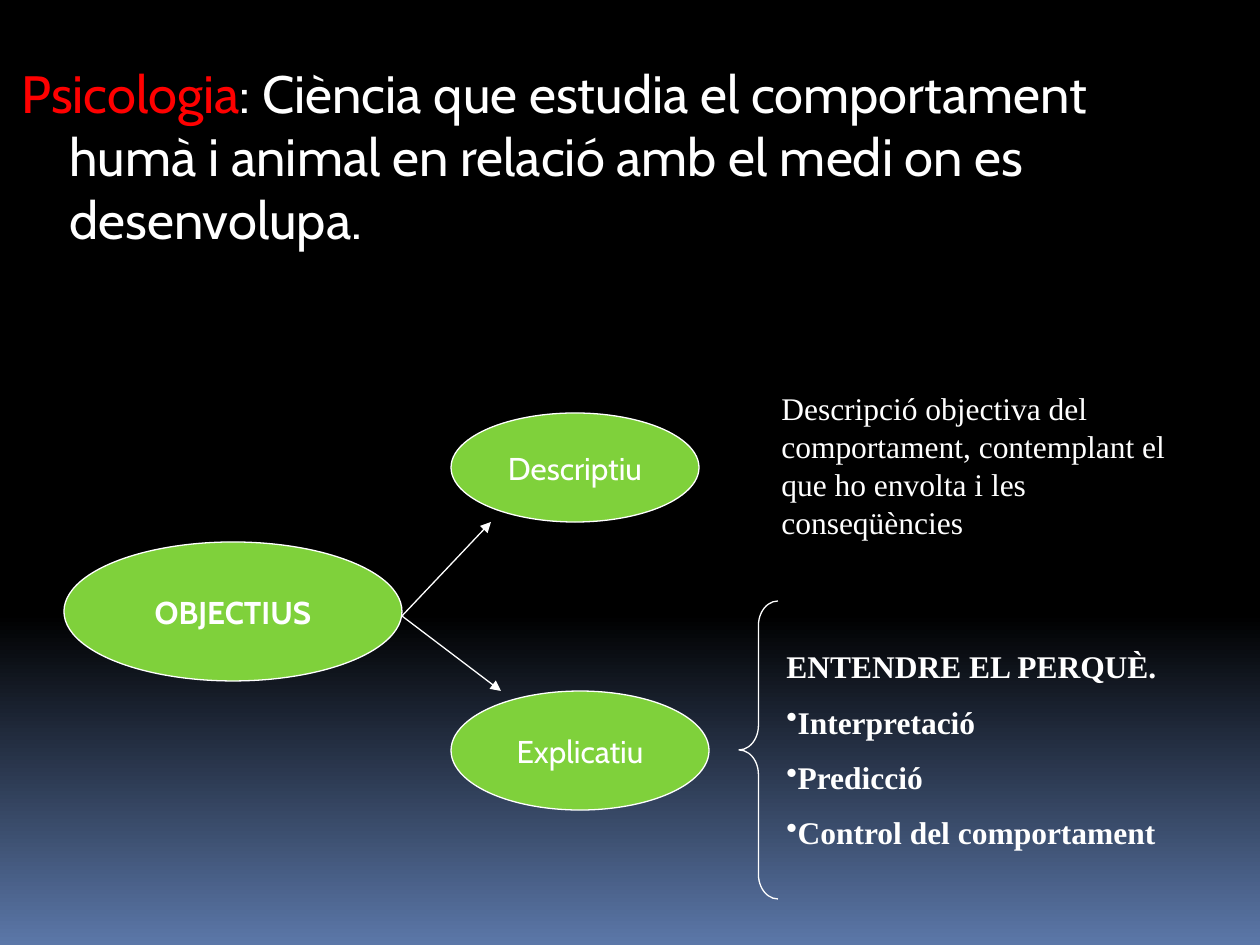
from copy import deepcopy
from dataclasses import dataclass

from lxml.etree import SubElement
from pptx import Presentation
from pptx.dml.color import RGBColor
from pptx.enum.shapes import MSO_CONNECTOR as Connector, MSO_SHAPE as Shape
from pptx.enum.text import MSO_ANCHOR as Anchor, MSO_AUTO_SIZE as AutoSize, PP_ALIGN as Align
from pptx.oxml.ns import qn
from pptx.util import Emu, Pt


@dataclass(frozen=True)
class Theme:
    black: RGBColor = RGBColor(0, 0, 0)
    blue: RGBColor = RGBColor(0x5B, 0x77, 0xA8)
    green: RGBColor = RGBColor(0x7F, 0xD1, 0x3B)
    red: RGBColor = RGBColor(0xFF, 0, 0)
    white: RGBColor = RGBColor(0xFF, 0xFF, 0xFF)
    sans: str = "Cabin"
    serif: str = "Times New Roman"
    definition_size: Pt = Pt(30)
    text_size: Pt = Pt(18)
    line_width: Pt = Pt(0.75)


THEME = Theme()
EMU_PER_PX = 914400 / 126


def px(length):
    return Emu(round(length * EMU_PER_PX))


def box(*lengths):
    return [px(length) for length in lengths]


def set_font(paragraph, name, size, bold=False):
    font = paragraph.font
    font.name, font.size, font.bold = name, size, bold
    font.color.rgb = THEME.white


def set_line(shape):
    shape.line.color.rgb = THEME.white
    shape.line.width = THEME.line_width


def set_background(slide):
    fill = slide.background.fill
    fill.gradient()
    fill.gradient_angle = 270
    for stop, color, position in zip(fill.gradient_stops, (THEME.black, THEME.blue), (0.65, 1)):
        stop.color.rgb = color
        stop.position = position
    stops = slide.element.find(".//" + qn("a:gsLst"))
    top_stop = deepcopy(stops[0])
    top_stop.set("pos", "0")
    stops.insert(0, top_stop)


def write_definition(slide, term, meaning):
    body = slide.placeholders[1]
    body.left, body.top, body.width, body.height = box(0, 55, 1134, 789)
    frame = body.text_frame
    frame.auto_size = AutoSize.NONE
    paragraph = frame.paragraphs[0]
    paragraph.space_before = Pt(7)
    set_font(paragraph, THEME.sans, THEME.definition_size)
    properties = paragraph._p.get_or_add_pPr()
    properties.set("marL", str(px(57)))
    properties.set("indent", str(-px(48)))
    properties.insert_element_before(
        properties.makeelement(qn("a:buNone")), "a:tabLst", "a:defRPr", "a:extLst")
    term_run = paragraph.add_run()
    term_run.text = term
    term_run.font.color.rgb = THEME.red
    paragraph.add_run().text = meaning


def add_ellipse(slide, text, bounds, bold=False):
    ellipse = slide.shapes.add_shape(Shape.OVAL, *box(*bounds))
    ellipse.shadow.inherit = False
    ellipse.fill.solid()
    ellipse.fill.fore_color.rgb = THEME.green
    set_line(ellipse)
    frame = ellipse.text_frame
    frame.word_wrap = False
    frame.vertical_anchor = Anchor.MIDDLE
    frame.text = text
    paragraph = frame.paragraphs[0]
    paragraph.alignment = Align.CENTER
    set_font(paragraph, THEME.sans, THEME.text_size, bold)


def add_arrow(slide, start, end):
    arrow = slide.shapes.add_connector(Connector.STRAIGHT, *box(*start, *end))
    set_line(arrow)
    SubElement(arrow.line._get_or_add_ln(), qn("a:tailEnd"), type="triangle")
    SubElement(arrow._element.spPr, qn("a:effectLst"))


def add_brace(slide, bounds):
    brace = slide.shapes.add_shape(Shape.LEFT_BRACE, *box(*bounds))
    brace.shadow.inherit = False
    brace.fill.background()
    set_line(brace)
    brace.adjustments[0] = 0.63
    brace.adjustments[1] = 0.5


def add_bullet(paragraph):
    properties = paragraph._p.get_or_add_pPr()
    bullet = properties.makeelement(qn("a:buChar"), {"char": "•"})
    properties.insert_element_before(bullet, "a:tabLst", "a:defRPr", "a:extLst")


def add_note(slide, heading, bounds, items=(), bold=False):
    frame = slide.shapes.add_textbox(*box(*bounds)).text_frame
    frame.word_wrap = True
    frame.text = "\n".join((heading, *items))
    for paragraph in frame.paragraphs:
        paragraph.space_before = Pt(10)
        set_font(paragraph, THEME.serif, THEME.text_size, bold)
    for paragraph in frame.paragraphs[1:]:
        add_bullet(paragraph)


def main():
    presentation = Presentation()
    presentation.slide_width, presentation.slide_height = box(1260, 945)
    slide = presentation.slides.add_slide(presentation.slide_layouts[1])
    title = slide.shapes.title.element
    title.getparent().remove(title)
    set_background(slide)

    write_definition(
        slide, "Psicologia",
        ": Ciència que estudia el comportament humà i animal"
        " en relació amb el medi on es desenvolupa.")

    add_ellipse(slide, "OBJECTIUS", (64, 542, 338, 139), bold=True)
    add_ellipse(slide, "Descriptiu", (451, 413, 248, 109))
    add_ellipse(slide, "Explicatiu", (451, 691, 258, 119))
    for end in ((491, 522), (501, 691)):
        add_arrow(slide, (402, 616), end)

    add_note(slide, "ENTENDRE EL PERQUÈ.", (774, 641, 486, 222),
             ("Interpretació", "Predicció", "Control del comportament"), bold=True)
    add_brace(slide, (739, 601, 39, 298))
    add_note(slide, "Descripció objectiva del comportament,"
             " contemplant el que ho envolta i les conseqüències", (769, 383, 456, 126))
    presentation.save("out.pptx")


if __name__ == "__main__":
    main()
